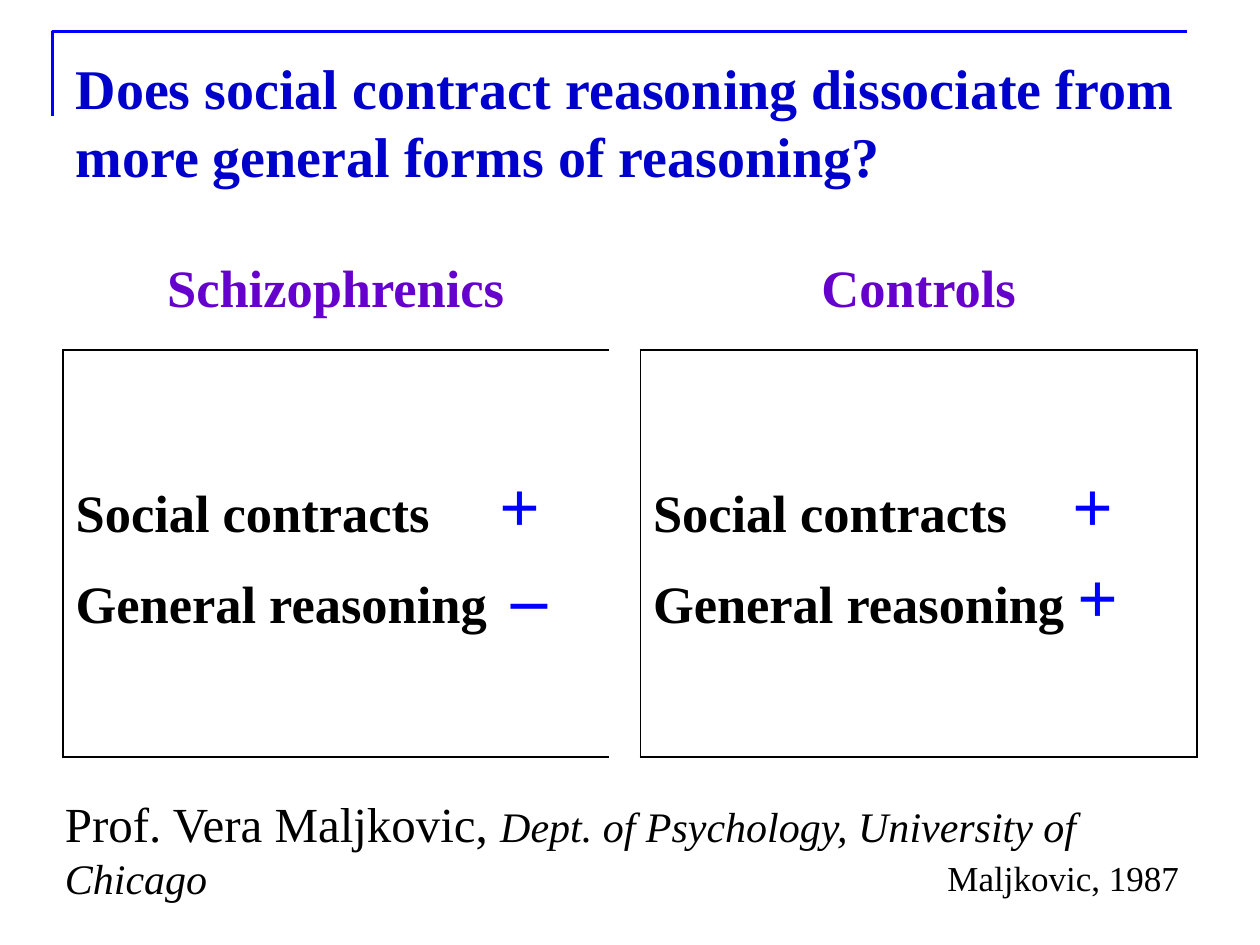
from dataclasses import dataclass
from lxml.etree import SubElement
from pptx import Presentation
from pptx.dml.color import RGBColor
from pptx.enum.text import MSO_ANCHOR, PP_ALIGN
from pptx.oxml.ns import qn
from pptx.util import Cm, Pt


@dataclass(frozen=True)
class Theme:
    font: str = "Times New Roman"
    title: str = "0000CC"
    accent: str = "0000FF"
    heading: str = "6600CC"
    text: str = "000000"
    title_size: float = 32
    body_size: float = 30
    mark_size: float = 41
    name_size: float = 28
    department_size: float = 24
    citation_size: float = 20


THEME = Theme()

# Heading, then rows of label, mark and tab position of the mark in cm
GROUPS = [
    ("Schizophrenics", [("Social contracts", "+", 8.55),
                        ("General reasoning", "–", 8.78)]),
    ("Controls", [("Social contracts", "+", 8.45),
                  ("General reasoning", "+", 8.55)]),
]


def add_run(paragraph, text, size, color, bold=False, italic=False):
    run = paragraph.add_run()
    run.text = text
    font = run.font
    font.name, font.size = THEME.font, Pt(size)
    font.bold, font.italic = bold, italic
    font.color.rgb = RGBColor.from_string(color)


def set_borders(cell, visible):
    """Draw the named sides (L, R, T, B) in black and hide the others."""
    properties = cell._tc.get_or_add_tcPr()
    for index, side in enumerate("LRTB"):
        line = properties.makeelement(qn(f"a:ln{side}"), {"w": str(Pt(1))})
        if side in visible:
            fill = SubElement(line, qn("a:solidFill"))
            SubElement(fill, qn("a:srgbClr"), val=THEME.text)
        else:
            SubElement(line, qn("a:noFill"))
        properties.insert(index, line)


def add_tab_stop(paragraph, position):
    tabs = SubElement(paragraph._p.get_or_add_pPr(), qn("a:tabLst"))
    SubElement(tabs, qn("a:tab"), pos=str(position), algn="l")


def add_corner_rule(slide, left, top, width, height):
    builder = slide.shapes.build_freeform(left, top + height)
    builder.add_line_segments([(left, top), (left + width, top)], close=False)
    rule = builder.convert_to_shape()
    rule.shadow.inherit = False
    rule.fill.background()
    rule.line.color.rgb = RGBColor.from_string(THEME.accent)
    rule.line.width = Pt(1.5)


def place_title(slide, left, top, width, height):
    title = slide.shapes.title
    title.left, title.top, title.width, title.height = left, top, width, height
    title.text_frame.vertical_anchor = MSO_ANCHOR.MIDDLE
    paragraph = title.text_frame.paragraphs[0]
    paragraph.alignment = PP_ALIGN.LEFT
    add_run(paragraph,
            "Does social contract reasoning dissociate from more general forms of reasoning?",
            THEME.title_size, THEME.title, bold=True)


def fill_group(heading_cell, body_cell, heading, rows):
    paragraph = heading_cell.text_frame.paragraphs[0]
    paragraph.alignment = PP_ALIGN.CENTER
    add_run(paragraph, heading, THEME.body_size, THEME.heading, bold=True)

    body_cell.vertical_anchor = MSO_ANCHOR.MIDDLE
    frame = body_cell.text_frame
    for index, (label, mark, stop) in enumerate(rows):
        paragraph = frame.add_paragraph() if index else frame.paragraphs[0]
        paragraph.space_before = Pt(6.5 if index else 0)
        add_tab_stop(paragraph, Cm(stop))
        add_run(paragraph, label + "\t", THEME.body_size, THEME.text, bold=True)
        add_run(paragraph, mark, THEME.mark_size, THEME.accent, bold=True)


def add_comparison(slide, left, top, width, height):
    table = slide.shapes.add_table(2, 3, left, top, width, height).table
    table.first_row = table.horz_banding = False
    heading_height, gap, first_width = Cm(1.93), Cm(0.64), Cm(11)
    table.rows[0].height = heading_height
    table.rows[1].height = height - heading_height
    for column, size in zip(table.columns, (first_width, gap, width - first_width - gap)):
        column.width = size

    # The gap column is one merged cell; the first box is open towards it
    table.cell(0, 1).merge(table.cell(1, 1))
    borders = [("B", "", "B"), ("LTB", "", "LRTB")]
    for row, sides in enumerate(borders):
        for column, visible in enumerate(sides):
            cell = table.cell(row, column)
            cell.fill.background()
            set_borders(cell, visible)
    for column, (heading, rows) in zip((0, 2), GROUPS):
        fill_group(table.cell(0, column), table.cell(1, column), heading, rows)


def add_text(slide, left, top, width, height, space_before):
    frame = slide.shapes.add_textbox(left, top, width, height).text_frame
    frame.word_wrap = True
    paragraph = frame.paragraphs[0]
    paragraph.space_before = Pt(space_before)
    return paragraph


def add_credits(slide, left, top, width, height):
    author = add_text(slide, left, top, Cm(21.8), Cm(1.45), 4)
    add_run(author, "Prof. Vera Maljkovic, ", THEME.name_size, THEME.text)
    add_run(author, "Dept. of Psychology, University of Chicago",
            THEME.department_size, THEME.text, italic=True)

    note_width, note_height = Cm(5.28), Cm(1.09)
    citation = add_text(slide, left + width - note_width, top + height - note_height,
                        note_width, note_height, 2.5)
    add_run(citation, "Maljkovic, 1987", THEME.citation_size, THEME.text)


def main():
    presentation = Presentation()
    presentation.slide_width, presentation.slide_height = Cm(25.4), Cm(19.05)
    slide = presentation.slides.add_slide(presentation.slide_layouts[5])
    add_corner_rule(slide, Cm(1.06), Cm(0.64), Cm(22.86), Cm(1.69))
    place_title(slide, Cm(1.27), Cm(0.85), Cm(22.86), Cm(3.18))
    add_comparison(slide, Cm(1.27), Cm(5.13), Cm(22.86), Cm(10.13))
    add_credits(slide, Cm(1.06), Cm(15.88), Cm(23.07), Cm(2.36))
    presentation.save("out.pptx")


if __name__ == "__main__":
    main()
